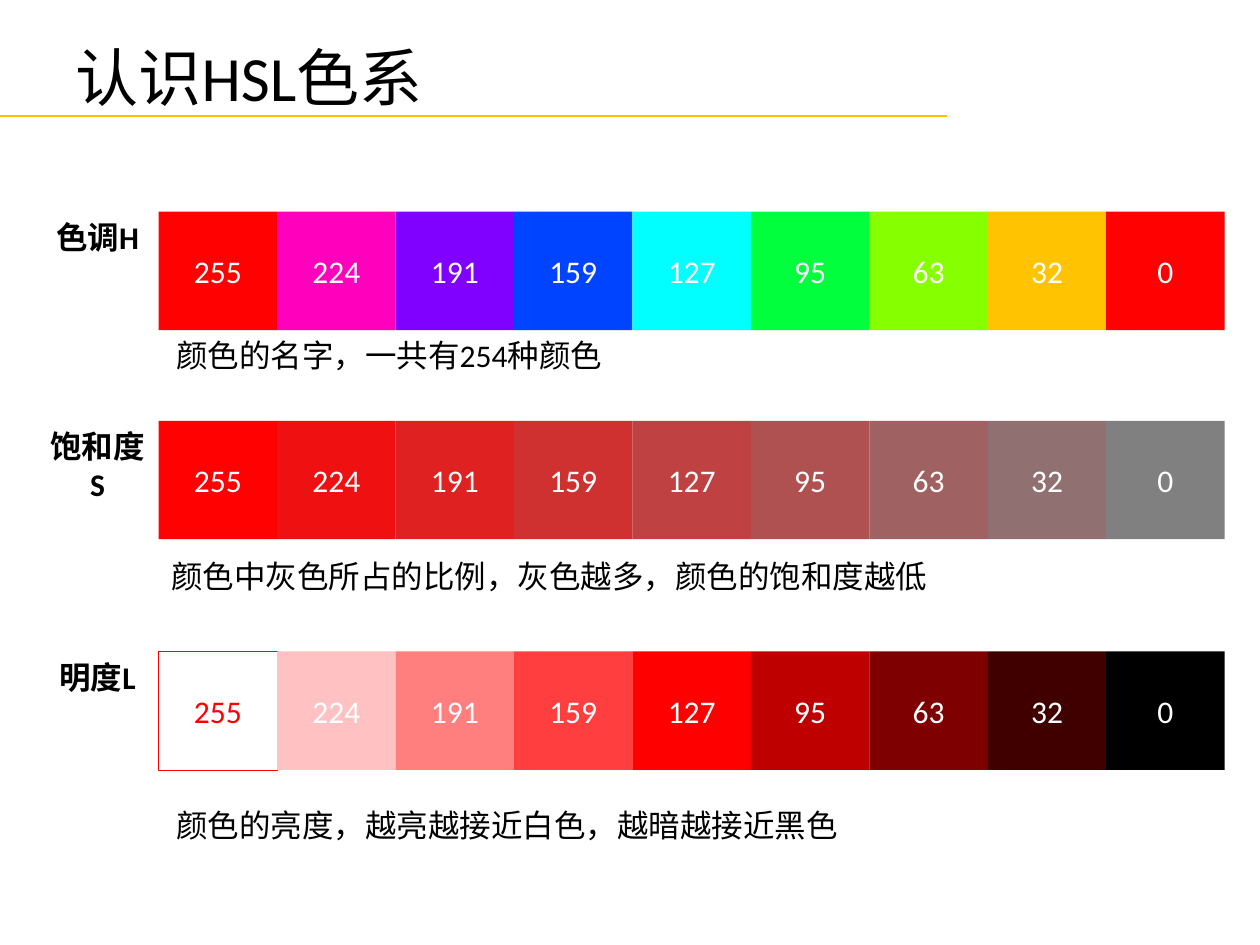
from dataclasses import dataclass

from lxml.etree import SubElement
from pptx import Presentation
from pptx.dml.color import RGBColor
from pptx.enum.shapes import MSO_CONNECTOR as Link, MSO_SHAPE as Kind
from pptx.enum.text import MSO_ANCHOR as Anchor, MSO_AUTO_SIZE as Fit, PP_ALIGN as Align
from pptx.oxml.ns import qn
from pptx.util import Pt

PX = 9144  # EMU per px, 100 px to the inch
SIDE, LEFT = 94, 126  # swatch edge, start of each band
LABEL_X, LABEL_W = 28, 99
RIGHT = LEFT + 9 * SIDE
LEVELS = (255, 224, 191, 159, 127, 95, 63, 32, 0)
WHITE, BLACK, RED, GOLD = "FFFFFF", "000000", "FF0000", "FFC000"

BODY = {"name": "Calibri", "size": Pt(18), "bold": False}
BOLD = BODY | {"bold": True}
HEAD = BODY | {"size": Pt(36)}
CELL = {"vertical_anchor": Anchor.MIDDLE, "word_wrap": True}
FLOW = {"word_wrap": True, "auto_size": Fit.SHAPE_TO_FIT_TEXT}
TITLE = CELL | {"auto_size": Fit.NONE}


@dataclass
class Band:
    label: str
    high: int  # label height
    top: int
    note: str
    note_x: int
    note_y: int
    fills: str


BANDS = (
    Band("色调H", 40, 168, "颜色的名字，一共有254种颜色", 130, 262,
         "FF0101 FF01BC 8001FF 0144FF 01FFFF 01FF3D 86FF01 FFC301 FF0101"),
    Band("饱和度S", 71, 334, "颜色中灰色所占的比例，灰色越多，颜色的饱和度越低", 126, 437,
         "FF0101 EF1111 DF2121 CF3131 BF4141 AF5151 9F6161 907070 808080"),
    Band("明度L", 40, 517, "颜色的亮度，越亮越接近白色，越暗越接近黑色", 130, 635,
         "FFFFFF FFC1C1 FF7F7F FF3F3F FE0000 BE0000 7E0000 400000 000000"),
)


def emu(*vals: int) -> list[int]:
    return [val * PX for val in vals]


def color(code: str) -> RGBColor:
    return RGBColor.from_string(code)


def apply(item, form: dict) -> None:
    for key, val in form.items():
        setattr(item, key, val)


def write(shape, text: str, font: dict, frame: dict, align, ink: str = BLACK) -> None:
    body = shape.text_frame
    apply(body, frame)
    para = body.paragraphs[0]
    para.alignment = align
    run = para.add_run()
    run.text = text
    apply(run.font, font)
    run.font.color.rgb = color(ink)


def swatch(slide, left: int, top: int, level: int, fill: str) -> None:
    box = slide.shapes.add_shape(Kind.RECTANGLE, *emu(left, top, SIDE, SIDE))
    box.shadow.inherit = False
    box.fill.solid()
    box.fill.fore_color.rgb = color(fill)
    # A white swatch needs a red edge and red text
    pale = fill == WHITE
    if pale:
        box.line.color.rgb = color(RED)
        box.line.width = Pt(0.25)
    else:
        box.line.fill.background()
    write(box, str(level), BODY, CELL, Align.CENTER, RED if pale else WHITE)


def text(slide, area: tuple, words: str, font: dict, align) -> None:
    box = slide.shapes.add_textbox(*emu(*area))
    write(box, words, font, FLOW, align)


def draw(slide, band: Band) -> None:
    for i, (level, fill) in enumerate(zip(LEVELS, band.fills.split())):
        swatch(slide, LEFT + i * SIDE, band.top, level, fill)
    text(slide, (LABEL_X, band.top, LABEL_W, band.high), band.label, BOLD, Align.CENTER)
    text(slide, (band.note_x, band.note_y, RIGHT - band.note_x, 40),
         band.note, BODY, Align.LEFT)


def rule(slide) -> None:
    line = slide.shapes.add_connector(Link.STRAIGHT, *emu(0, 92, 752, 92))
    line.line.color.rgb = color(GOLD)
    line.line.width = Pt(1.5)
    SubElement(line._element.spPr, qn("a:effectLst"))


def main() -> None:
    deck = Presentation()
    deck.slide_width, deck.slide_height = emu(1000, 750)
    slide = deck.slides.add_slide(deck.slide_layouts[5])

    # Title and the line below it
    title = slide.shapes.title
    apply(title, dict(zip(("left", "top", "width", "height"), emu(50, 21, 900, 79))))
    write(title, "认识HSL色系", HEAD, TITLE, Align.LEFT)
    rule(slide)

    # Hue, saturation and lightness
    for band in BANDS:
        draw(slide, band)
    deck.save("out.pptx")


if __name__ == "__main__":
    main()
